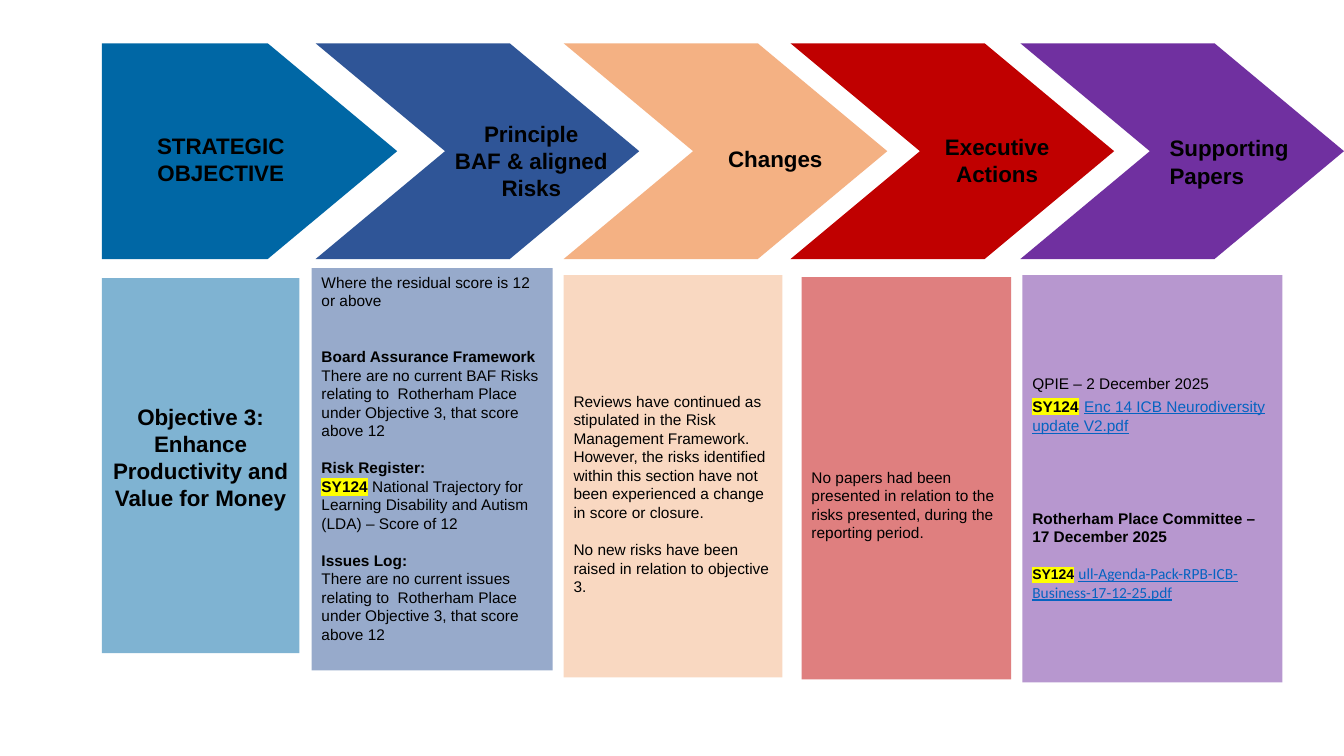
from lxml.etree import SubElement
from pptx import Presentation
from pptx.dml.color import RGBColor
from pptx.enum.shapes import MSO_SHAPE
from pptx.enum.text import MSO_ANCHOR, PP_ALIGN
from pptx.oxml.ns import qn
from pptx.util import Inches, Pt

BLACK = RGBColor(0x00, 0x00, 0x00)
LINK = RGBColor(0x05, 0x63, 0xC1)
BLUE = RGBColor(0x00, 0x67, 0xA5)
NAVY = RGBColor(0x2F, 0x55, 0x97)
PEACH = RGBColor(0xF4, 0xB1, 0x83)
RED = RGBColor(0xC0, 0x00, 0x00)
PURPLE = RGBColor(0x70, 0x30, 0xA0)
PALE_BLUE = RGBColor(0x7F, 0xB3, 0xD2)
PALE_NAVY = RGBColor(0x97, 0xAA, 0xCB)
PALE_PEACH = RGBColor(0xF9, 0xD8, 0xC1)
PALE_RED = RGBColor(0xDF, 0x7F, 0x7F)
PALE_PURPLE = RGBColor(0xB7, 0x97, 0xCF)

LINE = 13.3
ARROW_TOP, ARROW_HEIGHT = 0.43, 2.14


def add_block(kind, left, top, width, height, color):
    block = slide.shapes.add_shape(kind, Inches(left), Inches(top), Inches(width), Inches(height))
    block.shadow.inherit = False
    block.fill.solid()
    block.fill.fore_color.rgb = color
    block.line.fill.background()
    return block


def style(paragraph, size, bold, align):
    paragraph.alignment = align
    paragraph.font.name = "Arial"
    paragraph.font.size = Pt(size)
    paragraph.font.bold = bold
    paragraph.font.color.rgb = BLACK


prs = Presentation()
prs.slide_width = Inches(13.33)
prs.slide_height = Inches(7.5)
slide = prs.slides.add_slide(prs.slide_layouts[6])

stages = [
    (MSO_SHAPE.PENTAGON, 1.01, 2.93, BLUE),
    (MSO_SHAPE.CHEVRON, 3.13, 3.21, NAVY),
    (MSO_SHAPE.CHEVRON, 5.59, 3.21, PEACH),
    (MSO_SHAPE.CHEVRON, 7.84, 3.21, RED),
    (MSO_SHAPE.CHEVRON, 10.12, 3.21, PURPLE),
]
for kind, left, width, color in stages:
    arrow = add_block(kind, left, ARROW_TOP, width, ARROW_HEIGHT, color)
    arrow.adjustments[0] = 0.6

headings = [
    (1.29, 1.31, 1.8, PP_ALIGN.CENTER, 1.0, ["STRATEGIC", "OBJECTIVE"]),
    (4.37, 1.19, 1.8, PP_ALIGN.CENTER, 1.0, ["Principle", "BAF & aligned", "Risks"]),
    (6.79, 1.44, 1.8, PP_ALIGN.CENTER, 1.0, ["Changes"]),
    (8.99, 1.32, 1.8, PP_ALIGN.CENTER, 1.0, ["Executive", "Actions"]),
    (11.6, 1.31, 1.3, PP_ALIGN.LEFT, 1.07, ["Supporting Papers"]),
]
for left, top, width, align, spacing, lines in headings:
    heading = slide.shapes.add_textbox(
        Inches(left), Inches(top), Inches(width), Inches(0.27 * len(lines)))
    frame = heading.text_frame
    frame.word_wrap = True
    frame.margin_left = frame.margin_right = frame.margin_top = frame.margin_bottom = 0
    frame.text = "\n".join(lines)
    for paragraph in frame.paragraphs:
        style(paragraph, 16, True, align)
        paragraph.line_spacing = spacing

objective = add_block(MSO_SHAPE.RECTANGLE, 1.01, 2.76, 1.96, 3.72, PALE_BLUE)
objective.text_frame.word_wrap = True
objective.text_frame.vertical_anchor = MSO_ANCHOR.TOP
objective.text_frame.margin_top = Inches(1.24)
objective.text_frame.text = "Objective 3: Enhance Productivity and Value for Money"
style(objective.text_frame.paragraphs[0], 16, True, PP_ALIGN.CENTER)

panels = [
    (3.09, 2.66, 2.39, 3.99, 0.05, PALE_NAVY, [
        (0, [("Where the residual score is 12 or above", "plain")]),
        (2, [("Board Assurance Framework", "bold")]),
        (0, [("There are no current BAF Risks relating to  Rotherham Place "
              "under Objective 3, that score above 12", "plain")]),
        (1, [("Risk Register:", "bold")]),
        (0, [("SY124", "tag"), (" National Trajectory for Learning Disability "
                                "and Autism (LDA) – Score of 12", "plain")]),
        (1, [("Issues Log:", "bold")]),
        (0, [("There are no current issues relating to  Rotherham Place "
              "under Objective 3, that score above 12", "plain")]),
    ]),
    (5.59, 2.73, 2.17, 3.99, 1.16, PALE_PEACH, [
        (0, [("Reviews have continued as stipulated in the Risk Management Framework. "
              "However, the risks identified within this section have not been "
              "experienced a change in score or closure.", "plain")]),
        (1, [("No new risks have been raised in relation to objective 3.", "plain")]),
    ]),
    (7.95, 2.75, 2.08, 3.99, 1.89, PALE_RED, [
        (0, [("No papers had been presented in relation to the risks presented, "
              "during the reporting period.", "plain")]),
    ]),
    (10.14, 2.73, 2.58, 4.04, 0.98, PALE_PURPLE, [
        (0, [("QPIE – 2 December 2025", "plain")]),
        (0, [("SY124", "tag"), (" ", "wide"),
             ("Enc 14 ICB Neurodiversity update V2.pdf", "link")]),
        (4, [("Rotherham Place Committee – 17 December 2025", "bold")]),
        (1, [("SY124", "small tag"), (" ", "plain"),
             ("ull-Agenda-Pack-RPB-ICB-Business-17-12-25.pdf", "calibri link")]),
    ]),
]
for left, top, width, height, inset, color, paragraphs in panels:
    panel = add_block(MSO_SHAPE.RECTANGLE, left, top, width, height, color)
    frame = panel.text_frame
    frame.word_wrap = True
    frame.vertical_anchor = MSO_ANCHOR.TOP
    frame.margin_top = Inches(inset)
    for index, (gap_lines, pieces) in enumerate(paragraphs):
        paragraph = frame.add_paragraph() if index else frame.paragraphs[0]
        style(paragraph, 11, pieces[0][1] == "bold", PP_ALIGN.LEFT)
        if gap_lines:
            paragraph.space_before = Pt(gap_lines * LINE)
        for text, look in pieces:
            run = paragraph.add_run()
            run.text = text
            if "tag" in look:
                run.font.bold = True
                highlight = SubElement(run.font._element, qn("a:highlight"))
                SubElement(highlight, qn("a:srgbClr"), val="FFFF00")
            if "small" in look:
                run.font.size = Pt(10)
            if look == "wide":
                run.font.size = Pt(14)
            if "link" in look:
                run.font.underline = True
                run.font.color.rgb = LINK
            if "calibri" in look:
                run.font.name = "Calibri"

prs.save("out.pptx")
